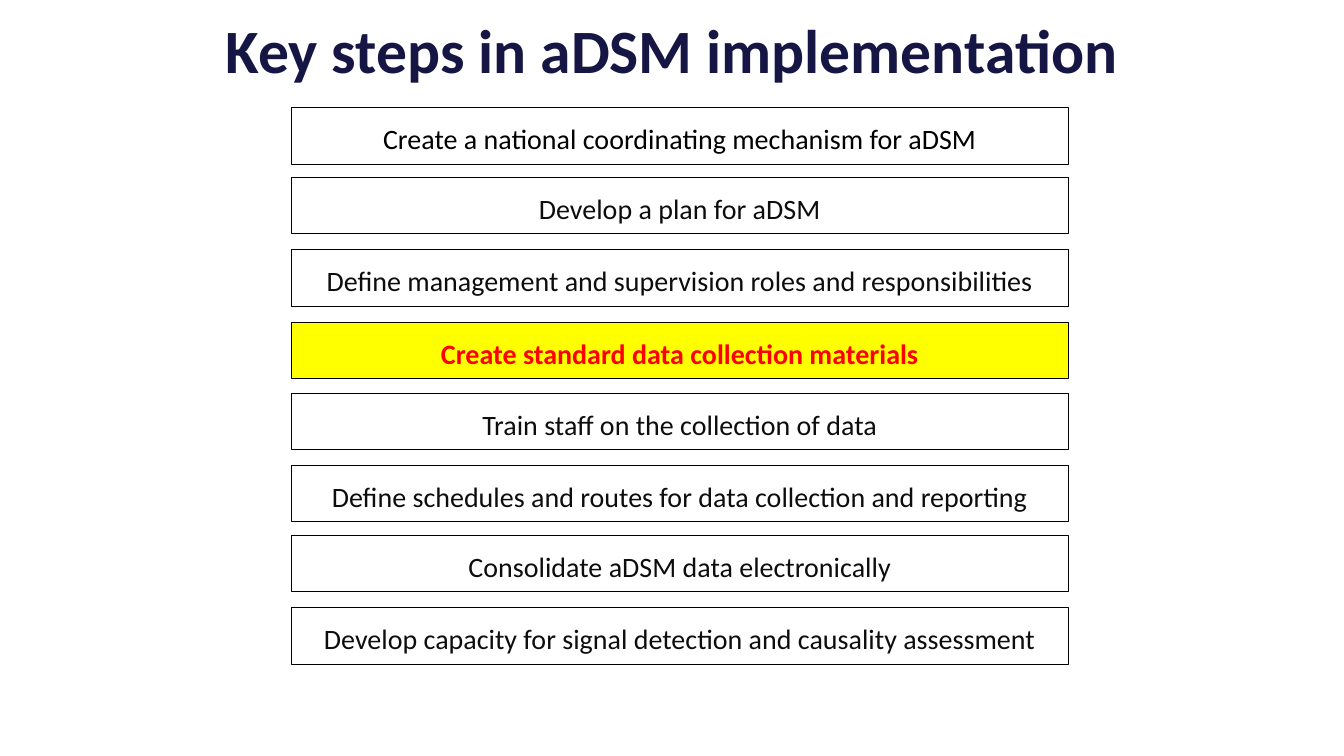
from dataclasses import dataclass

from pptx import Presentation
from pptx.dml.color import RGBColor
from pptx.enum.shapes import MSO_SHAPE as Preset
from pptx.enum.text import MSO_ANCHOR as Anchor, MSO_AUTO_SIZE as AutoSize, PP_ALIGN as Align
from pptx.slide import Slide
from pptx.text.text import TextFrame
from pptx.util import Cm, Pt


@dataclass(frozen=True)
class Theme:
    font: str = "Calibri"
    title_size: int = 44
    step_size: int = 20
    title: str = "161645"
    text: str = "0D0D0D"
    black: str = "000000"
    white: str = "FFFFFF"
    highlight: str = "FFFF00"
    highlight_text: str = "FF0000"


THEME = Theme()


@dataclass(frozen=True)
class Step:
    top: float
    text: str
    color: str = THEME.text
    fill: str = THEME.white
    bold: bool = False


STEPS = [
    Step(2.72, "Create a national coordinating mechanism for aDSM", color=THEME.black),
    Step(4.47, "Develop a plan for aDSM"),
    Step(6.3, "Define management and supervision roles and responsibilities"),
    Step(8.13, "Create standard data collection materials",
         THEME.highlight_text, THEME.highlight, True),
    Step(9.91, "Train staff on the collection of data"),
    Step(11.73, "Define schedules and routes for data collection and reporting"),
    Step(13.49, "Consolidate aDSM data electronically"),
    Step(15.32, "Develop capacity for signal detection and causality assessment"),
]
STEP_LEFT, STEP_WIDTH, STEP_HEIGHT = Cm(7.34), Cm(19.58), Cm(1.42)


def write_centred(frame: TextFrame, text: str, size: int, color: str, bold: bool) -> None:
    frame.text = text
    frame.word_wrap = True
    frame.auto_size = AutoSize.NONE
    frame.vertical_anchor = Anchor.MIDDLE
    para = frame.paragraphs[0]
    para.alignment = Align.CENTER
    font = para.runs[0].font
    font.name = THEME.font
    font.size = Pt(size)
    font.bold = bold
    font.color.rgb = RGBColor.from_string(color)


def add_title(page: Slide, text: str) -> None:
    title = page.shapes.title
    title.left, title.top, title.width, title.height = Cm(5.33), Cm(0.13), Cm(23.22), Cm(2.21)
    write_centred(title.text_frame, text, THEME.title_size, THEME.title, True)


def add_step(page: Slide, step: Step) -> None:
    box = page.shapes.add_shape(
        Preset.RECTANGLE, STEP_LEFT, Cm(step.top), STEP_WIDTH, STEP_HEIGHT)
    box.shadow.inherit = False
    box.fill.solid()
    box.fill.fore_color.rgb = RGBColor.from_string(step.fill)
    box.line.color.rgb = RGBColor.from_string(THEME.black)
    box.line.width = Pt(0.75)
    write_centred(box.text_frame, step.text, THEME.step_size, step.color, step.bold)
    para = box.text_frame.paragraphs[0]
    para.line_spacing = 1.15
    para.space_after = Pt(10)


def main() -> None:
    deck = Presentation()
    deck.slide_width, deck.slide_height = Cm(33.87), Cm(19.05)
    page = deck.slides.add_slide(deck.slide_layouts.get_by_name("Title Only"))
    add_title(page, "Key steps in aDSM implementation")
    for step in STEPS:
        add_step(page, step)
    deck.save("out.pptx")


if __name__ == "__main__":
    main()
